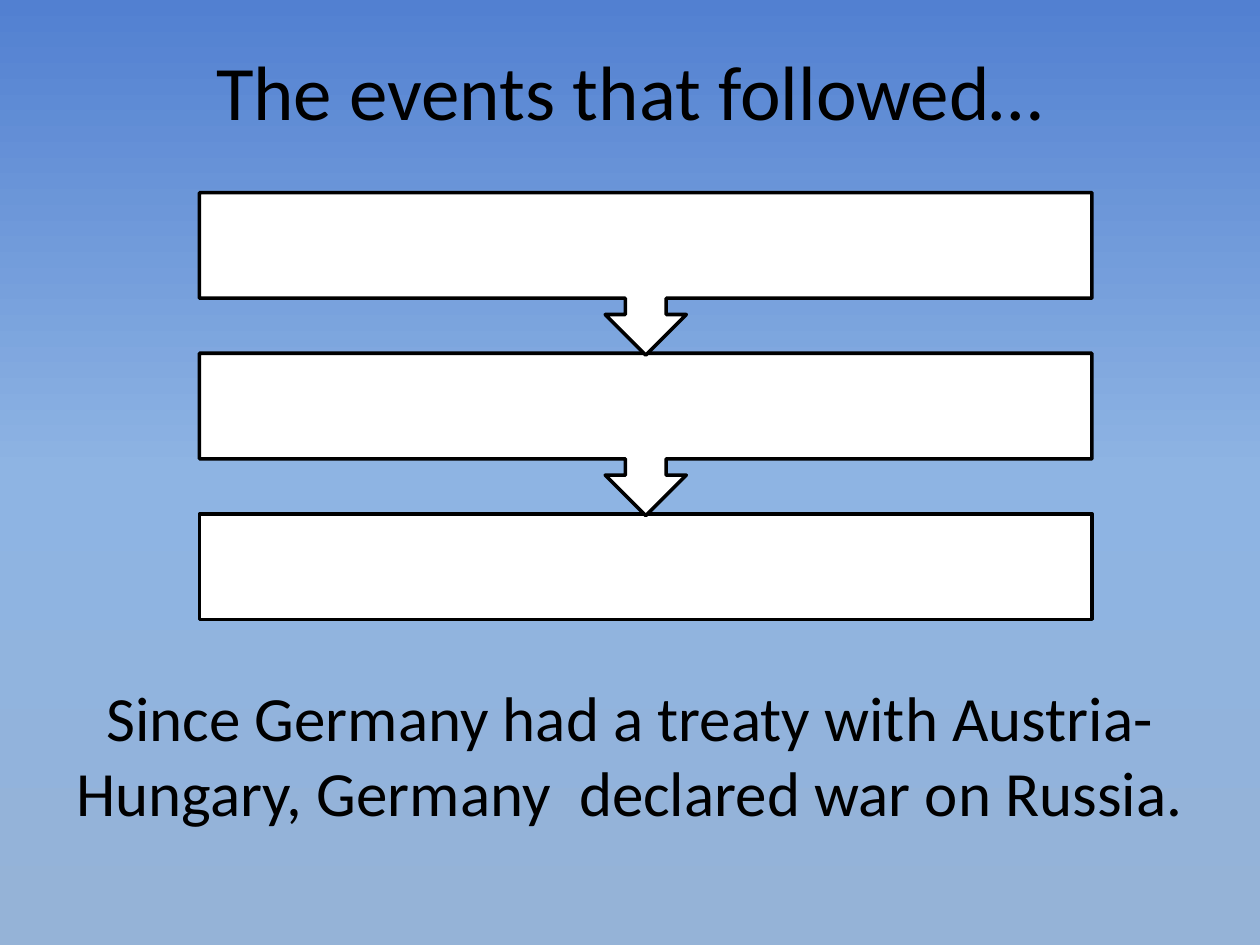
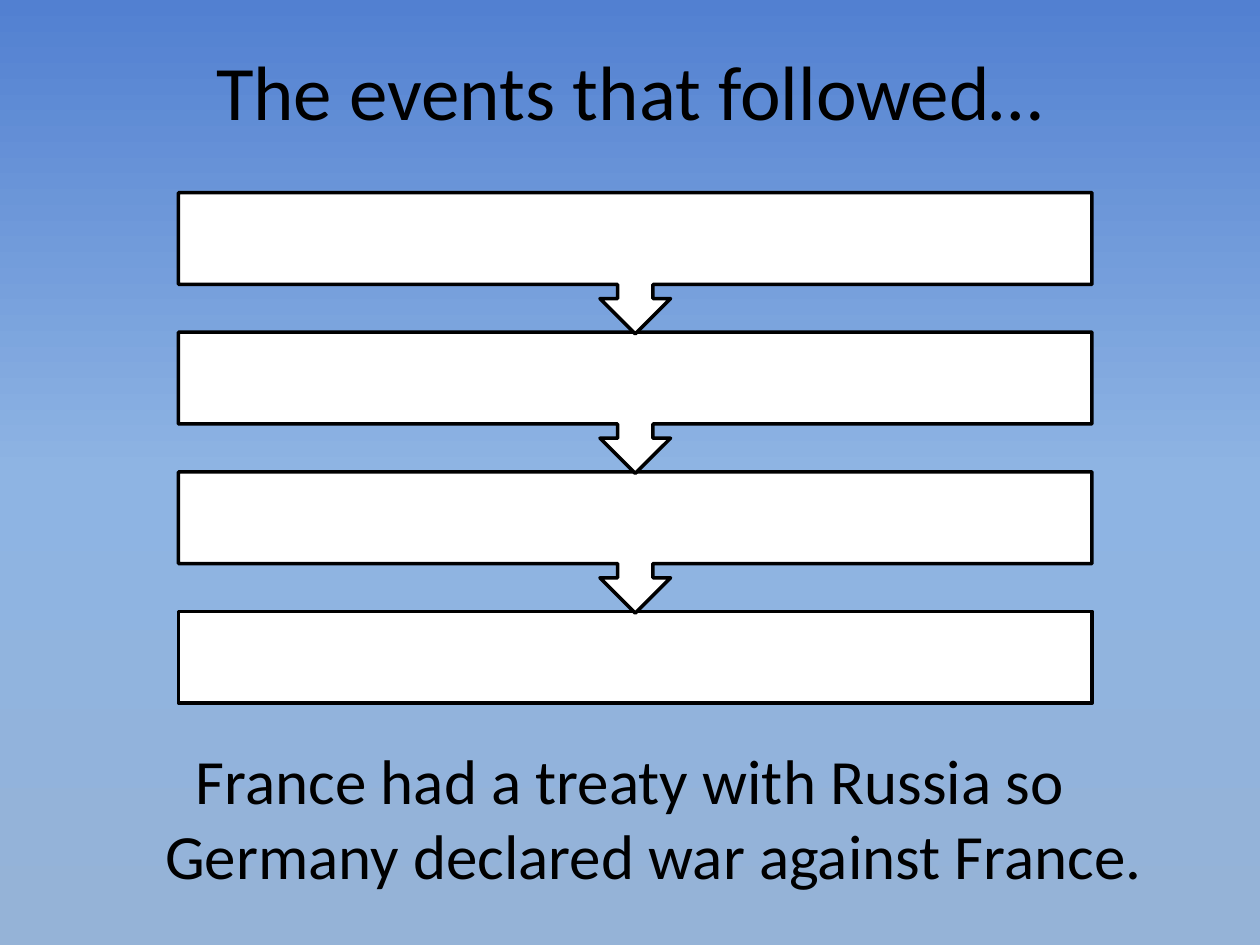
import copy

import pptx
import pptx.util
from pptx.dml.color import RGBColor
from pptx.enum.shapes import MSO_SHAPE
from pptx.enum.text import MSO_ANCHOR, PP_ALIGN
from pptx.oxml.ns import qn

Pt = pptx.util.Pt

# Shared look
BLACK = RGBColor(0x00, 0x00, 0x00)
WHITE = RGBColor(0xFF, 0xFF, 0xFF)
SKY = [
    (0, RGBColor(0x52, 0x80, 0xD1)),
    (0.5, RGBColor(0x8E, 0xB4, 0xE3)),
    (1, RGBColor(0x95, 0xB3, 0xD7)),
]
FONT = "Calibri"
TITLE = "The events that followed…"
TITLE_AREA = (36, 6, 648, 90)
CHAIN_TOP = 110.1
HANGING = 27

# What differs from slide to slide
EVENTS = [
    {
        "text": "Since Germany had a treaty with Austria-\n"
                "Hungary, Germany  declared war on Russia.",
        "text_area": (12, 384, 696, 104.4),
        "left": 114, "width": 510, "steps": 3,
        "pitch": 91.75, "callout_height": 92.8, "last_height": 60.3,
    },
    {
        "text": "France had a treaty with Russia so "
                "Germany declared war against France.",
        "text_area": (42, 420, 636, 102),
        "left": 102, "width": 522, "steps": 4,
        "pitch": 79.75, "callout_height": 80.7, "last_height": 52.5,
    },
]


def add_text(page, area, text, size, anchor, hanging=0):
    box = page.shapes.add_textbox(*map(Pt, area))
    frame = box.text_frame
    frame.word_wrap = True
    frame.vertical_anchor = anchor
    frame.text = text
    for para in frame.paragraphs:
        para.alignment = PP_ALIGN.CENTER
        if hanging:
            properties = para._p.get_or_add_pPr()
            properties.set("marL", str(Pt(hanging)))
            properties.set("indent", str(-Pt(hanging)))
        for span in para.runs:
            span.font.size = Pt(size)
            span.font.name = FONT
            span.font.color.rgb = BLACK


deck = pptx.Presentation()
deck.slide_width = Pt(720)
deck.slide_height = Pt(540)

for event in EVENTS:
    page = deck.slides.add_slide(deck.slide_layouts[6])

    # Three-stop background, running from top to bottom
    fill = page.background.fill
    fill.gradient()
    fill.gradient_angle = 270
    stop_list = page.element.find(".//" + qn("a:gsLst"))
    stop_list.append(copy.deepcopy(stop_list[-1]))
    for stop, (position, color) in zip(fill.gradient_stops, SKY):
        stop.position = position
        stop.color.rgb = color

    # Title and explanation
    add_text(page, TITLE_AREA, TITLE, 44, MSO_ANCHOR.MIDDLE)
    add_text(page, event["text_area"], event["text"], 36, MSO_ANCHOR.TOP, HANGING)

    # Chain of steps, from the last box upwards so that each arrow lies on top
    chain = page.shapes.add_group_shape()
    last = event["steps"] - 1
    for step in range(last, -1, -1):
        is_last = step == last
        kind = MSO_SHAPE.RECTANGLE if is_last else MSO_SHAPE.UP_ARROW_CALLOUT
        height = event["last_height"] if is_last else event["callout_height"]
        top = CHAIN_TOP + step * event["pitch"]
        box = chain.shapes.add_shape(
            kind, Pt(event["left"]), Pt(top), Pt(event["width"]), Pt(height))
        box.rotation = 0 if is_last else 180
        box.shadow.inherit = False
        box.fill.solid()
        box.fill.fore_color.rgb = WHITE
        box.line.color.rgb = BLACK
        box.line.width = Pt(2)

deck.save("out.pptx")
